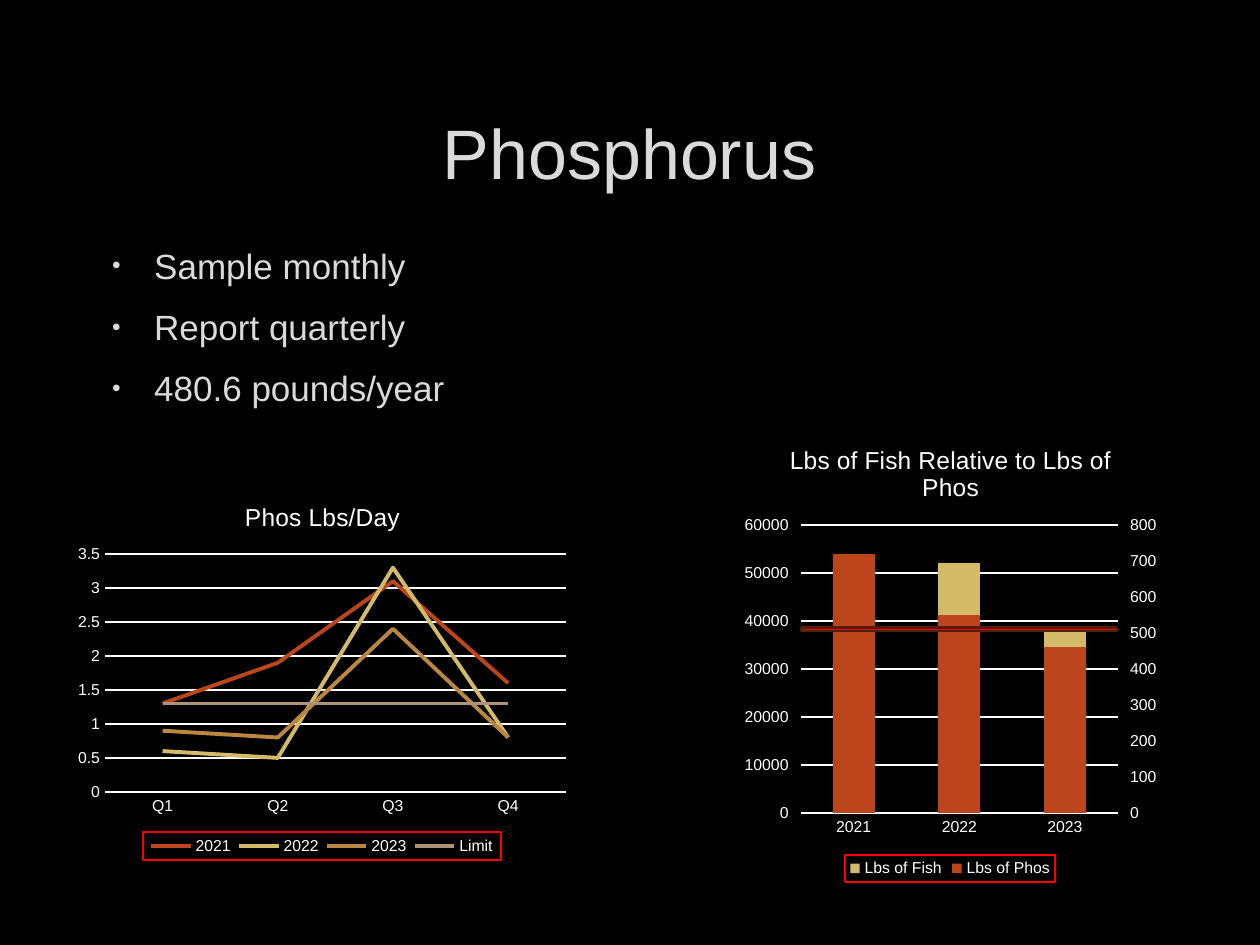
from copy import deepcopy
from dataclasses import dataclass

from lxml import etree
from pptx import Presentation
from pptx.chart.data import CategoryChartData
from pptx.dml.color import RGBColor
from pptx.enum import chart as charts, shapes, text
from pptx.oxml import parse_xml
from pptx.oxml.ns import nsdecls, qn
from pptx.util import Pt


@dataclass(frozen=True)
class Theme:
    font: str = "Arial"
    background: str = "000000"
    text: str = "DADADA"
    outline: str = "404040"
    chart_text: str = "FFFFFF"
    alert: str = "FF0000"
    rust: str = "BC451B"
    sand: str = "D3BA68"
    ochre: str = "BB8640"
    taupe: str = "AD9277"
    dark_rust: str = "521E0C"
    title_size: float = 40
    body_size: float = 20
    chart_title_size: float = 14
    chart_size: float = 10
    label_size: float = 9


THEME = Theme()


@dataclass(frozen=True)
class Area:
    """A rectangle on the page, in points."""
    left: float
    top: float
    width: float
    height: float

    def lengths(self) -> list:
        return [Pt(v) for v in (self.left, self.top, self.width, self.height)]


@dataclass(frozen=True)
class Series:
    name: str
    values: tuple
    color: str


@dataclass(frozen=True)
class Panel:
    title: str
    kind: charts.XL_CHART_TYPE
    area: Area
    plot: Area
    legend: Area
    categories: tuple
    series: tuple
    top_value: float
    step: float
    tick: charts.XL_TICK_MARK


PHOS_PER_DAY = Panel(
    "Phos Lbs/Day", charts.XL_CHART_TYPE.LINE,
    Area(38.9, 275.8, 290.9, 216), Area(60, 316.6, 263.4, 136),
    Area(81.7, 475.4, 204.6, 16), ("Q1", "Q2", "Q3", "Q4"),
    (Series("2021", (1.3, 1.9, 3.1, 1.6), THEME.rust),
     Series("2022", (0.6, 0.5, 3.3, 0.8), THEME.sand),
     Series("2023", (0.9, 0.8, 2.4, 0.8), THEME.ochre),
     Series("Limit", (1.3,) * 4, THEME.taupe)),
    3.5, 0.5, charts.XL_TICK_MARK.NONE)
FISH_AND_PHOS = Panel(
    "Lbs of Fish Relative to Lbs of Phos", charts.XL_CHART_TYPE.COLUMN_CLUSTERED,
    Area(420.5, 242, 245.5, 262.8), Area(457.7, 300, 181.1, 164.6),
    Area(482.9, 488.6, 120, 15.4), ("2021", "2022", "2023"),
    (Series("Lbs of Fish", (43000, 52000, 38000), THEME.sand),
     Series("Lbs of Phos", (720, 550, 460), THEME.rust)),
    60000, 10000, charts.XL_TICK_MARK.OUTSIDE)


def apply(target, values: dict) -> None:
    for name, value in values.items():
        setattr(target, name, value)


def style_font(font, size: float, color: str) -> None:
    apply(font, {"name": THEME.font, "size": Pt(size), "bold": False})
    font.color.rgb = RGBColor.from_string(color)


def style_line(line, color: str, width: float) -> None:
    line.color.rgb = RGBColor.from_string(color)
    line.width = Pt(width)


def add_outline(span) -> None:
    """Give the letters a faint outline."""
    span._r.get_or_add_rPr().insert(0, parse_xml(
        f'<a:ln {nsdecls("a")} w="9525"><a:solidFill><a:srgbClr val="{THEME.outline}">'
        '<a:alpha val="10000"/></a:srgbClr></a:solidFill></a:ln>'))


def add_bullet(para) -> None:
    properties = para._p.get_or_add_pPr()
    apply_indent = {"marL": Pt(27), "indent": -Pt(24)}
    for name, value in apply_indent.items():
        properties.set(name, str(int(value)))
    color = etree.SubElement(properties, qn("a:buClr"))
    etree.SubElement(color, qn("a:srgbClr"), val=THEME.text)
    etree.SubElement(properties, qn("a:buSzPct"), val="70000")
    etree.SubElement(properties, qn("a:buFont"), typeface=THEME.font)
    etree.SubElement(properties, qn("a:buChar"), char="•")


def add_text(page, area: Area, lines: tuple, size: float, bulleted: bool) -> None:
    frame = page.shapes.add_textbox(*area.lengths()).text_frame
    anchor = text.MSO_ANCHOR.TOP if bulleted else text.MSO_ANCHOR.MIDDLE
    apply(frame, {"word_wrap": True, "vertical_anchor": anchor})
    for index, line in enumerate(lines):
        para = frame.add_paragraph() if index else frame.paragraphs[0]
        if bulleted:
            add_bullet(para)
            para.space_after = Pt(6)
            if index:
                para.space_before = Pt(5)
        else:
            para.alignment = text.PP_ALIGN.CENTER
        span = para.add_run()
        span.text = line
        style_font(span.font, size, THEME.text)
        add_outline(span)


def layout_xml(part: Area, whole: Area, target: str = ""):
    """Place a chart part as fractions of the whole chart."""
    places = {"x": (part.left - whole.left) / whole.width,
              "y": (part.top - whole.top) / whole.height,
              "w": part.width / whole.width, "h": part.height / whole.height}
    modes = '<c:xMode val="edge"/><c:yMode val="edge"/>'
    values = "".join(f'<c:{k} val="{v:.4f}"/>' for k, v in places.items())
    return parse_xml(f'<c:layout {nsdecls("c")}><c:manualLayout>{target}{modes}{values}'
                     '</c:manualLayout></c:layout>')


def place_parts(chart, panel: Panel) -> None:
    plot_area = chart._chartSpace.find(".//" + qn("c:plotArea"))
    legend = chart.legend._element
    for parent in (plot_area, legend):
        for old in parent.findall(qn("c:layout")):
            parent.remove(old)
    plot_area.insert(0, layout_xml(panel.plot, panel.area, '<c:layoutTarget val="inner"/>'))
    legend.find(qn("c:legendPos")).addnext(layout_xml(panel.legend, panel.area))
    legend.find(qn("c:txPr")).addprevious(parse_xml(
        f'<c:spPr {nsdecls("c", "a")}><a:noFill/><a:ln w="9525"><a:solidFill>'
        f'<a:srgbClr val="{THEME.alert}"/></a:solidFill></a:ln></c:spPr>'))


def add_chart(page, panel: Panel):
    data = CategoryChartData()
    data.categories = panel.categories
    for item in panel.series:
        data.add_series(item.name, item.values)
    chart = page.shapes.add_chart(panel.kind, *panel.area.lengths(), data).chart
    style_font(chart.font, THEME.chart_size, THEME.chart_text)
    chart.chart_title.text_frame.text = panel.title
    title_span = chart.chart_title.text_frame.paragraphs[0].runs[0]
    style_font(title_span.font, THEME.chart_title_size, THEME.chart_text)
    apply(chart, {"has_legend": True})
    apply(chart.legend, {"position": charts.XL_LEGEND_POSITION.BOTTOM,
                         "include_in_layout": False})
    style_font(chart.legend.font, THEME.label_size, THEME.chart_text)
    category, value = chart.category_axis, chart.value_axis
    for axis in (category, value):
        style_font(axis.tick_labels.font, THEME.label_size, THEME.chart_text)
    category.major_tick_mark = charts.XL_TICK_MARK.NONE
    style_line(category.format.line, THEME.chart_text, 0.75)
    apply(value, {"minimum_scale": 0, "maximum_scale": panel.top_value,
                  "major_unit": panel.step, "major_tick_mark": panel.tick,
                  "has_major_gridlines": True})
    value.format.line.fill.background()
    style_line(value.major_gridlines.format.line, THEME.chart_text, 0.75)
    plot = chart.plots[0]
    plot.vary_by_categories = False
    for item, series in zip(panel.series, plot.series):
        if panel.kind == charts.XL_CHART_TYPE.LINE:
            series.smooth = False
            series.marker.style = charts.XL_MARKER_STYLE.NONE
            style_line(series.format.line, item.color, 2.25)
        else:
            series.format.fill.solid()
            series.format.fill.fore_color.rgb = RGBColor.from_string(item.color)
    if panel.kind != charts.XL_CHART_TYPE.LINE:
        plot.gap_width = 150
    place_parts(chart, panel)
    return chart


def move_last_series_right(chart, top_value: float, step: float) -> None:
    """Stack the last series on a second value axis at the right."""
    bars = chart.plots[0]._element
    category, value = chart.category_axis._element, chart.value_axis._element
    right_bars, right_value, hidden = (deepcopy(e) for e in (bars, value, category))
    bars.remove(bars.findall(qn("c:ser"))[-1])
    for series in right_bars.findall(qn("c:ser"))[:-1]:
        right_bars.remove(series)
    right_bars.find(qn("c:grouping")).set("val", "stacked")
    for old in right_bars.findall(qn("c:overlap")):
        right_bars.remove(old)
    overlap = parse_xml(f'<c:overlap {nsdecls("c")} val="100"/>')
    right_bars.find(qn("c:gapWidth")).addnext(overlap)
    bars.addnext(right_bars)
    value.addnext(right_value)
    right_value.addnext(hidden)
    ids = ("50010", "50020")
    for element, number in zip(right_bars.findall(qn("c:axId")), ids):
        element.set("val", number)
    for axis, own, other in ((hidden, *ids), (right_value, *ids[::-1])):
        axis.find(qn("c:axId")).set("val", own)
        axis.find(qn("c:crossAx")).set("val", other)
    hidden.find(qn("c:delete")).set("val", "1")
    right_value.remove(right_value.find(qn("c:majorGridlines")))
    settings = {"c:axPos": "r", "c:crosses": "max", "c:majorUnit": str(step)}
    for tag, setting in settings.items():
        right_value.find(qn(tag)).set("val", setting)
    right_value.find(qn("c:scaling")).find(qn("c:max")).set("val", str(top_value))


def add_limit_bar(page, area: Area) -> None:
    bar = page.shapes.add_shape(shapes.MSO_SHAPE.MATH_MINUS, *area.lengths())
    bar.shadow.inherit = False
    bar.fill.solid()
    bar.fill.fore_color.rgb = RGBColor.from_string(THEME.alert)
    style_line(bar.line, THEME.dark_rust, 1.25)


def main() -> None:
    deck = Presentation()
    apply(deck, {"slide_width": Pt(720), "slide_height": Pt(540)})
    page = deck.slides.add_slide(deck.slide_layouts[6])
    page.background.fill.solid()
    page.background.fill.fore_color.rgb = RGBColor.from_string(THEME.background)
    add_text(page, Area(54, 48.2, 611.3, 76.3), ("Phosphorus",), THEME.title_size, False)
    add_text(page, Area(54, 136.1, 298.8, 319.7),
             ("Sample monthly", "Report quarterly", "480.6 pounds/year"),
             THEME.body_size, True)
    add_chart(page, PHOS_PER_DAY)
    move_last_series_right(add_chart(page, FISH_AND_PHOS), 800, 100)
    add_limit_bar(page, Area(425.5, 355, 245.5, 9.4))
    deck.save("out.pptx")


if __name__ == "__main__":
    main()
